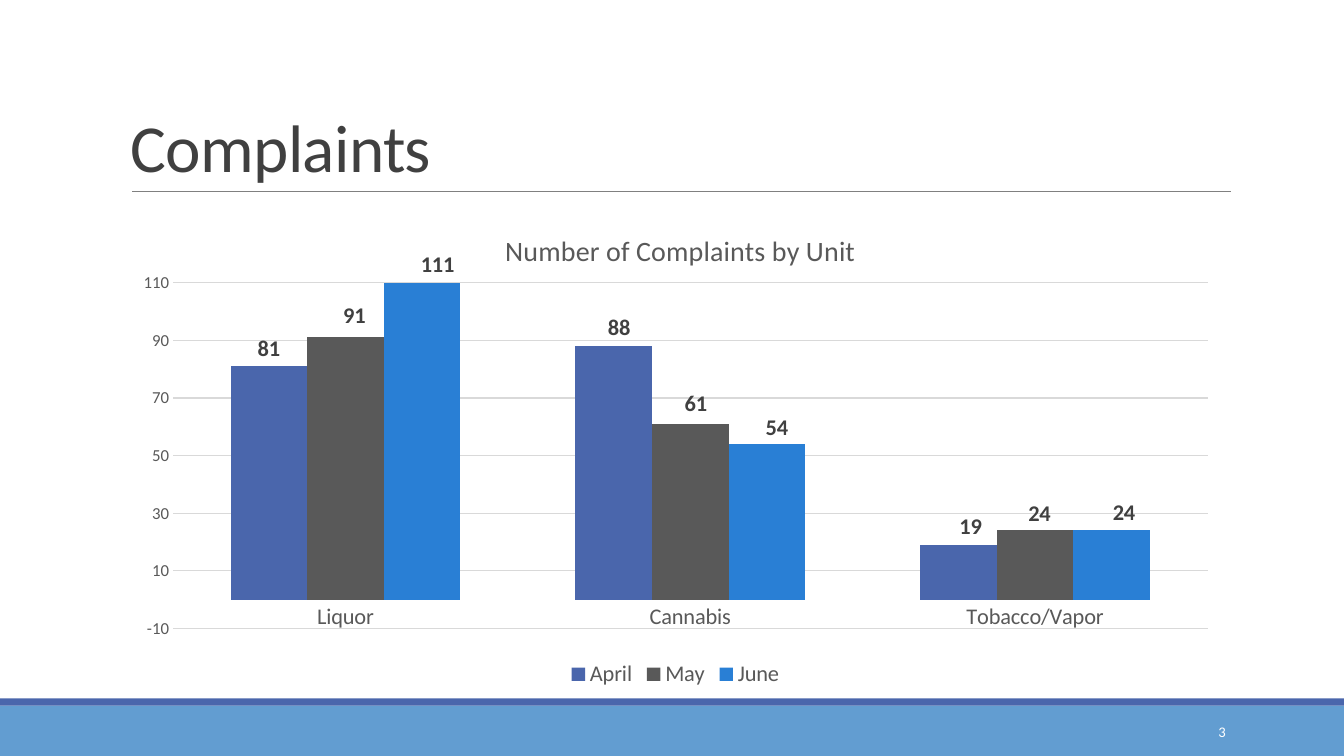
import pptx
import pptx.chart.data
import pptx.dml.color
import pptx.enum.chart
import pptx.enum.shapes
import pptx.enum.text
import pptx.oxml
import pptx.oxml.ns
import pptx.util

CELL = pptx.util.Inches(0.1)
COLS, ROWS = 133.33, 75
FONT = "Calibri"
GREY = "595959"
UNITS = ["Liquor", "Cannabis", "Tobacco/Vapor"]
MONTHS = {
    "April": ([81, 88, 19], "4A66AC", [(0, 0), (0.5, 0), (1.1, 0)]),
    "May": ([91, 61, 24], GREY, [(0.8, -0.7), (0.5, -0.4), (0.4, 0.2)]),
    "June": ([111, 54, 24], "297FD5", [(1.4, 0), (0.9, 0.4), (1.1, 0)]),
}


def rgb(value):
    return pptx.dml.color.RGBColor.from_string(value)


def cells(*values):
    return [round(v * CELL) for v in values]


def apply(obj, formats):
    for name, value in formats.items():
        setattr(obj, name, value)


def style_font(font, size, color, bold=False):
    apply(font, {"name": FONT, "size": pptx.util.Pt(size), "bold": bold})
    font.color.rgb = rgb(color)


def add_band(s, box, color):
    sp = s.shapes.add_shape(pptx.enum.shapes.MSO_SHAPE.RECTANGLE, *cells(*box))
    sp.shadow.inherit = False
    sp.fill.solid()
    sp.fill.fore_color.rgb = rgb(color)
    sp.line.fill.background()


def add_text(s, box, text, size, color, anchor, align):
    tf = s.shapes.add_textbox(*cells(*box)).text_frame
    apply(tf, {"word_wrap": True, "vertical_anchor": anchor})
    p = tf.paragraphs[0]
    p.alignment = align
    r = p.add_run()
    r.text = text
    style_font(r.font, size, color)
    return p, r


def add_heading(s, box, text):
    left, top, width, height = box
    p, r = add_text(s, box, text, 48, "404040",
                    pptx.enum.text.MSO_ANCHOR.BOTTOM, pptx.enum.text.PP_ALIGN.LEFT)
    p.line_spacing = 0.85
    r.font._element.set("spc", "-50")
    x1, x2, y = cells(left + 1.1, left + 110.1, top + height)
    rule = s.shapes.add_connector(pptx.enum.shapes.MSO_CONNECTOR.STRAIGHT, x1, y, x2, y)
    rule.line.color.rgb = rgb("808080")
    rule.line.width = pptx.util.Pt(0.5)
    rule._element.spPr.append(pptx.oxml.parse_xml(
        f'<a:effectLst {pptx.oxml.ns.nsdecls("a")}/>'))


def manual_layout(percents, inner=False):
    parts = '<c:layoutTarget val="inner"/>' if inner else ""
    if len(percents) == 4 or inner:
        parts += '<c:xMode val="edge"/><c:yMode val="edge"/>'
    parts += "".join(f'<c:{k} val="{v / 100:.4f}"/>' for k, v in zip("xywh", percents))
    return pptx.oxml.parse_xml(
        f'<c:layout {pptx.oxml.ns.nsdecls("c")}><c:manualLayout>{parts}'
        "</c:manualLayout></c:layout>")


def set_layout(element, layout, after=None):
    for old in element.xpath("./c:layout"):
        element.remove(old)
    if after is None:
        element.insert(0, layout)
    else:
        element.xpath(f"./c:{after}")[0].addnext(layout)


def style_axes(chart):
    for axis, size in ((chart.category_axis, 16), (chart.value_axis, 12)):
        apply(axis, {"major_tick_mark": pptx.enum.chart.XL_TICK_MARK.NONE,
                     "minor_tick_mark": pptx.enum.chart.XL_TICK_MARK.NONE})
        style_font(axis.tick_labels.font, size, GREY)
        axis.format.line.fill.background()
    axis = chart.value_axis
    apply(axis, {"minimum_scale": -10, "maximum_scale": 110, "major_unit": 20,
                 "has_major_gridlines": True})
    line = axis.major_gridlines.format.line
    line.color.rgb = rgb("D9D9D9")
    line.width = pptx.util.Pt(0.75)


def style_series(series, color, offsets):
    series.format.fill.solid()
    series.format.fill.fore_color.rgb = rgb(color)
    series.format.line.fill.background()
    series.invert_if_negative = False
    labels = series.data_labels
    apply(labels, {"show_value": True,
                   "position": pptx.enum.chart.XL_LABEL_POSITION.OUTSIDE_END})
    style_font(labels.font, 16, "404040", True)
    for i in range(len(offsets)):
        label = series.points[i].data_label
        style_font(label.font, 16, "404040", True)
        label.position = pptx.enum.chart.XL_LABEL_POSITION.OUTSIDE_END
    for element, offset in zip(labels._element.xpath("./c:dLbl"), offsets):
        set_layout(element, manual_layout(offset), "idx")


def add_complaints_chart(s, box, title):
    data = pptx.chart.data.CategoryChartData()
    data.categories = UNITS
    for month, (values, color, offsets) in MONTHS.items():
        data.add_series(month, values)
    chart = s.shapes.add_chart(pptx.enum.chart.XL_CHART_TYPE.COLUMN_CLUSTERED,
                               *cells(*box), data).chart
    style_font(chart.font, 10, "000000")
    apply(chart, {"has_title": True, "has_legend": True})
    tf = chart.chart_title.text_frame
    tf.text = title
    style_font(tf.paragraphs[0].runs[0].font, 20, GREY)
    apply(chart.chart_title, {"include_in_layout": False})
    title_layout = manual_layout((34.2, 4.5, 0, 0)[:2])
    manual = title_layout[0]
    for mode in ("yMode", "xMode"):
        manual.insert(0, pptx.oxml.parse_xml(
            f'<c:{mode} {pptx.oxml.ns.nsdecls("c")} val="edge"/>'))
    set_layout(chart.chart_title._element, title_layout, "tx")
    apply(chart.legend, {"position": pptx.enum.chart.XL_LEGEND_POSITION.BOTTOM,
                         "include_in_layout": False})
    style_font(chart.legend.font, 16, GREY)
    plot = chart.plots[0]
    apply(plot, {"gap_width": 150, "overlap": 0, "vary_by_categories": False})
    style_axes(chart)
    for series in plot.series:
        values, color, offsets = MONTHS[series.name]
        style_series(series, color, offsets)
    set_layout(chart.element.xpath(".//c:plotArea")[0],
               manual_layout((4.7, 16.2, 93.3, 70.7), True))


def add_footer(s, box, number):
    left, top, width, height = box
    add_band(s, (left, top + 0.7, width, height - 0.7), "629DD1")
    add_band(s, (left, top, width, 0.7), "4A66AC")
    add_text(s, (left + 108.3, top + 1.3, 14.3, 4), number, 10.5, "FFFFFF",
             pptx.enum.text.MSO_ANCHOR.MIDDLE, pptx.enum.text.PP_ALIGN.RIGHT)


def main():
    prs = pptx.Presentation()
    prs.slide_width, prs.slide_height = cells(COLS, ROWS)
    s = prs.slides.add_slide(prs.slide_layouts[6])
    add_footer(s, (0, 69.3, COLS, 5.7), "3")
    add_heading(s, (12, 3.1, 120.5, 15.9), "Complaints")
    add_complaints_chart(s, (12, 20.2, 110, 48.5), "Number of Complaints by Unit")
    prs.save("out.pptx")


if __name__ == "__main__":
    main()
